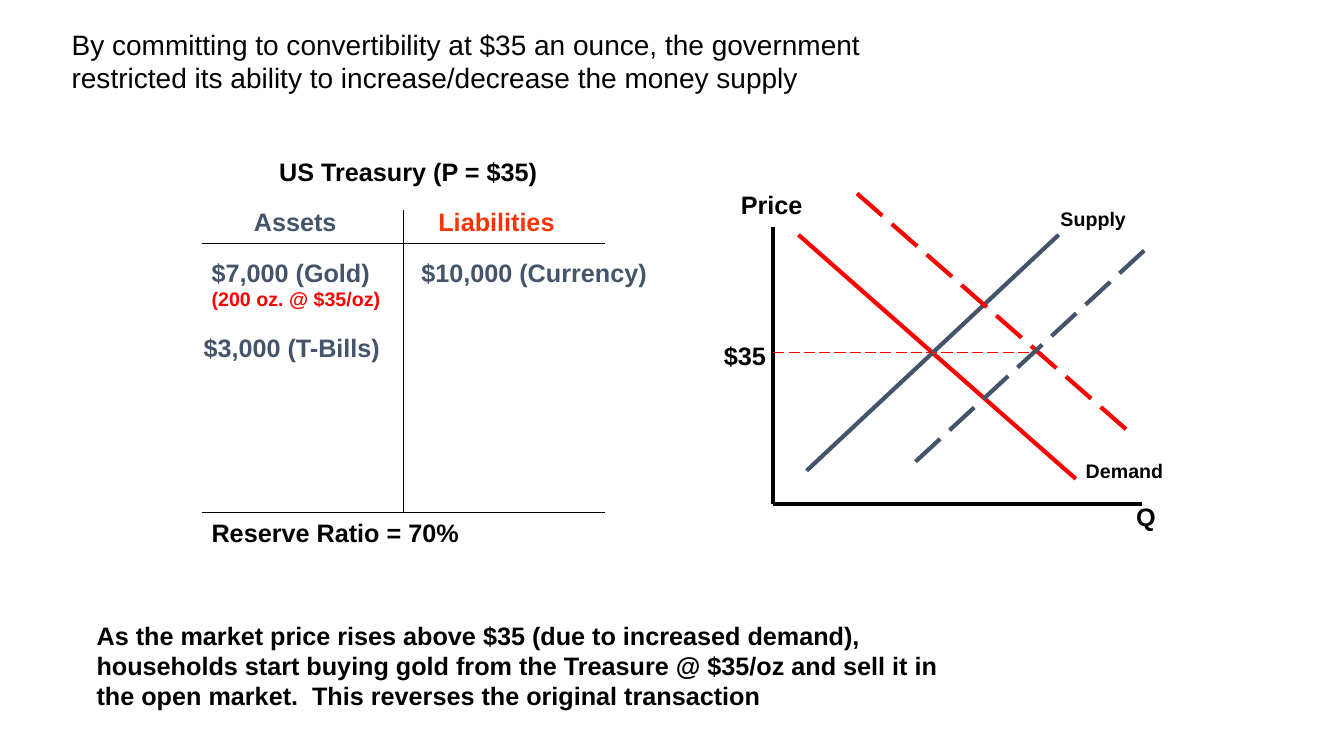
from lxml import etree
from pptx import Presentation
from pptx.dml.color import RGBColor
from pptx.enum.dml import MSO_LINE
from pptx.enum.shapes import MSO_CONNECTOR
from pptx.enum.text import MSO_ANCHOR, MSO_AUTO_SIZE, PP_ALIGN
from pptx.oxml.ns import qn
from pptx.util import Inches, Pt

BLACK = RGBColor(0x00, 0x00, 0x00)
RED = RGBColor(0xFF, 0x00, 0x00)
ORANGE = RGBColor(0xFF, 0x33, 0x00)
SLATE = RGBColor(0x44, 0x54, 0x6A)
STRAIGHT = MSO_CONNECTOR.STRAIGHT
DASH = MSO_LINE.LONG_DASH
FONT = "Arial"
TITLE_ONLY = 5


def write(sp, box, runs, bold=True):
    """Place a text shape and fill its paragraph with (text, size, colour) runs."""
    sp.left, sp.top, sp.width, sp.height = map(Inches, box)
    tf = sp.text_frame
    tf.word_wrap = True
    tf.auto_size = MSO_AUTO_SIZE.NONE
    tf.vertical_anchor = MSO_ANCHOR.TOP
    p = tf.paragraphs[0]
    p.alignment = PP_ALIGN.LEFT
    for text, size, color in runs:
        r = p.add_run()
        r.text = text
        r.font.name = FONT
        r.font.size = Pt(size)
        r.font.bold = bold
        r.font.color.rgb = color


def draw_line(s, start, end, color, width, dash=None):
    line = s.shapes.add_connector(STRAIGHT, *map(Inches, start + end))
    line.line.color.rgb = color
    line.line.width = Pt(width)
    if dash is not None:
        line.line.dash_style = dash
    etree.SubElement(line._element.spPr, qn("a:effectLst"))


prs = Presentation()
prs.slide_width = Inches(13.33)
prs.slide_height = Inches(7.5)
s = prs.slides.add_slide(prs.slide_layouts[TITLE_ONLY])

title = ("By committing to convertibility at $35 an ounce, the government "
         "restricted its ability to increase/decrease the money supply")
write(s.shapes.title, (0.61, 0.22, 9, 0.77), [(title, 20, BLACK)], bold=False)

# Treasury T-account
account_lines = [
    ((2, 2.42), (6, 2.42)),
    ((4, 2.08), (4, 5.08)),
    ((2, 5.08), (6, 5.08)),
]
for start, end in account_lines:
    draw_line(s, start, end, BLACK, 0.75)

# Supply and demand graph
graph_lines = [
    ((7.67, 2.25), (7.67, 5), BLACK, 3, None),
    ((11.33, 5), (7.67, 5), BLACK, 3, None),
    ((7.92, 2.33), (10.67, 4.75), RED, 3, None),
    ((8, 4.67), (10.5, 2.33), SLATE, 3, None),
    ((7.67, 3.5), (10.33, 3.5), RED, 1, DASH),
    ((8.5, 1.92), (11.25, 4.33), RED, 3, DASH),
    ((9.08, 4.58), (11.42, 2.42), SLATE, 3, DASH),
]
for start, end, color, width, dash in graph_lines:
    draw_line(s, start, end, color, width, dash)

conclusion = ("As the market price rises above $35 (due to increased demand), "
              "households start buying gold from the Treasure @ $35/oz and sell it in "
              "the open market.  This reverses the original transaction")
labels = [
    ((2.67, 1.5, 3.17, 0.4), [("US Treasury (P = $35)", 18, BLACK)]),
    ((2.42, 2, 2, 0.4), [("Assets", 18, SLATE)]),
    ((4.25, 2, 2, 0.4), [("Liabilities", 18, ORANGE)]),
    ((2, 2.5, 2.08, 0.63), [("$7,000 (Gold) ", 18, SLATE),
                            ("(200 oz. @ $35/oz)", 14, RED)]),
    ((4.08, 2.5, 2.58, 0.4), [("$10,000 (Currency)", 18, SLATE)]),
    ((1.92, 3.25, 2.42, 0.4), [("$3,000 (T-Bills)", 18, SLATE)]),
    ((2, 5.08, 3.58, 0.4), [("Reserve Ratio = 70%", 18, BLACK)]),
    ((7.25, 1.83, 0.83, 0.4), [("Price", 18, BLACK)]),
    ((7.08, 3.33, 0.92, 0.4), [("$35", 18, BLACK)]),
    ((11.17, 4.92, 0.5, 0.4), [("Q", 18, BLACK)]),
    ((10.42, 2, 1, 0.33), [("Supply", 14, BLACK)]),
    ((10.67, 4.5, 1, 0.33), [("Demand", 14, BLACK)]),
    ((0.86, 6.1, 8.75, 1), [(conclusion, 18, BLACK)]),
]
for box, runs in labels:
    write(s.shapes.add_textbox(0, 0, 0, 0), box, runs)

prs.save("out.pptx")
